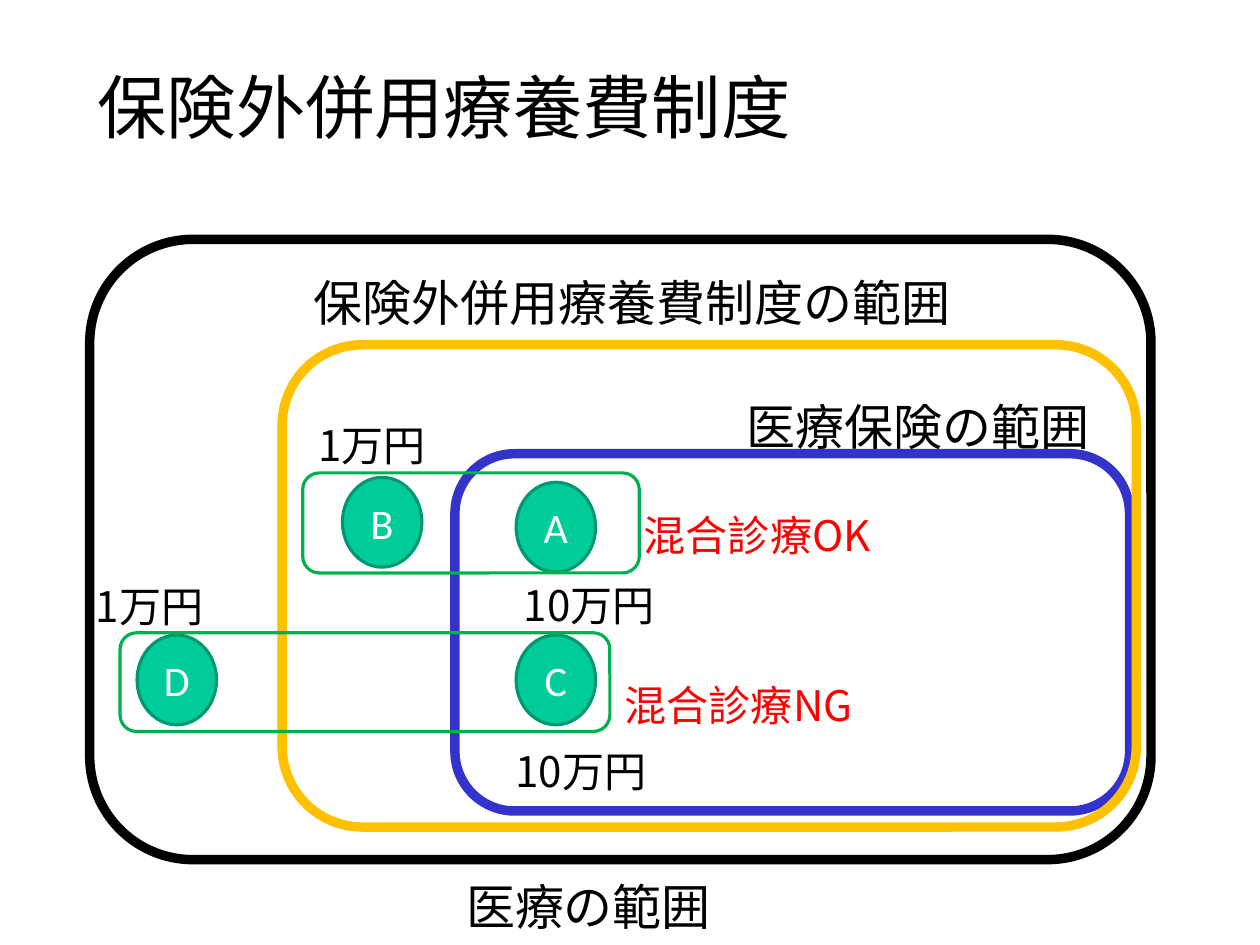
from dataclasses import dataclass
from typing import Any, Optional

from lxml.etree import SubElement
from pptx import Presentation
from pptx.dml.color import RGBColor
from pptx.enum.shapes import MSO_SHAPE
from pptx.enum.text import MSO_ANCHOR, MSO_AUTO_SIZE, PP_ALIGN
from pptx.oxml.ns import qn
from pptx.util import Cm, Pt

BLACK = RGBColor(0x00, 0x00, 0x00)
WHITE = RGBColor(0xFF, 0xFF, 0xFF)
RED = RGBColor(0xFF, 0x00, 0x00)
BLUE = RGBColor(0x33, 0x33, 0xCC)
ORANGE = RGBColor(0xFF, 0xC0, 0x00)
GREEN = RGBColor(0x00, 0xB0, 0x50)
TEAL = RGBColor(0x00, 0xCC, 0x99)
DARK_TEAL = RGBColor(0x00, 0x97, 0x71)

JAPANESE_FONT = "Noto Sans CJK JP"
LATIN_FONT = "Calibri"
TITLE_SIZE, RANGE_SIZE, NOTE_SIZE = 44, 31.1, 26.7
RANGE_HEIGHT, NOTE_HEIGHT = 1.57, 1.4
CARE_WIDTH, CARE_HEIGHT = 1.78, 2.01


@dataclass(frozen=True)
class Frame:
    left: float
    top: float
    width: float
    height: float
    line: RGBColor
    weight: float
    fill: Optional[RGBColor] = None


@dataclass(frozen=True)
class Care:
    letter: str
    left: float
    top: float


@dataclass(frozen=True)
class Label:
    text: str
    left: float
    top: float
    width: float
    size: float = NOTE_SIZE
    color: RGBColor = BLACK


RANGES = (
    Frame(2.01, 5.36, 23.77, 13.89, BLACK, 6),
    Frame(10.19, 10.16, 15.11, 8.0, BLUE, 6, WHITE),
    Frame(6.32, 7.72, 19.13, 10.8, ORANGE, 6),
)
CARES = (
    Care("A", 11.56, 10.8),
    Care("B", 7.67, 10.69),
    Care("C", 11.56, 14.22),
    Care("D", 3.07, 14.22),
)
COMBINATIONS = (
    Frame(6.78, 10.59, 7.54, 2.24, GREEN, 2),
    Frame(2.69, 14.17, 10.97, 2.21, GREEN, 2),
)
LABELS = (
    Label("医療の範囲", 10.19, 19.51, 9.32, RANGE_SIZE),
    Label("保険外併用療養費制度の範囲", 6.78, 5.97, 17.27, RANGE_SIZE),
    Label("医療保険の範囲", 16.48, 8.76, 10.41, RANGE_SIZE),
    Label("混合診療OK", 14.17, 11.28, 9.4, color=RED),
    Label("混合診療NG", 13.74, 15.09, 9.4, color=RED),
    Label("10万円", 11.48, 12.85, 4.67),
    Label("10万円", 11.3, 16.56, 4.67),
    Label("1万円", 6.88, 9.27, 4.67),
    Label("1万円", 1.9, 12.88, 4.67),
)


def set_attributes(target: Any, values: dict[str, Any]) -> None:
    for name, value in values.items():
        setattr(target, name, value)


def write_text(shape: Any, text: str, size: float, color: RGBColor,
               font_name: str = JAPANESE_FONT,
               alignment: PP_ALIGN = PP_ALIGN.LEFT) -> None:
    paragraph = shape.text_frame.paragraphs[0]
    paragraph.alignment = alignment
    run = paragraph.add_run()
    run.text = text
    run.font.color.rgb = color
    set_attributes(run.font, {"name": font_name, "size": Pt(size), "bold": False})
    SubElement(run.font._element, qn("a:ea"), typeface=font_name)


def add_frame(slide: Any, frame: Frame,
              outline: MSO_SHAPE = MSO_SHAPE.ROUNDED_RECTANGLE) -> Any:
    shape = slide.shapes.add_shape(
        outline, Cm(frame.left), Cm(frame.top), Cm(frame.width), Cm(frame.height))
    shape.shadow.inherit = False
    shape.line.color.rgb = frame.line
    shape.line.width = Pt(frame.weight)
    if frame.fill is None:
        shape.fill.background()
    else:
        shape.fill.solid()
        shape.fill.fore_color.rgb = frame.fill
    return shape


def add_care(slide: Any, care: Care) -> None:
    circle = add_frame(
        slide,
        Frame(care.left, care.top, CARE_WIDTH, CARE_HEIGHT, DARK_TEAL, 2, TEAL),
        MSO_SHAPE.OVAL)
    circle.text_frame.vertical_anchor = MSO_ANCHOR.MIDDLE
    write_text(circle, care.letter, NOTE_SIZE, WHITE, LATIN_FONT, PP_ALIGN.CENTER)


def add_label(slide: Any, label: Label) -> None:
    height = RANGE_HEIGHT if label.size == RANGE_SIZE else NOTE_HEIGHT
    box = slide.shapes.add_textbox(
        Cm(label.left), Cm(label.top), Cm(label.width), Cm(height))
    set_attributes(box.text_frame, {
        "word_wrap": True, "auto_size": MSO_AUTO_SIZE.SHAPE_TO_FIT_TEXT})
    write_text(box, label.text, label.size, label.color)


def main() -> None:
    presentation = Presentation()
    set_attributes(presentation, {"slide_width": Cm(28.22), "slide_height": Cm(21.16)})
    slide = presentation.slides.add_slide(presentation.slide_layouts.get_by_name("Title Only"))

    title = slide.shapes.title
    set_attributes(title, {"left": Cm(1.93), "top": Cm(1.12),
                           "width": Cm(24.33), "height": Cm(2.51)})
    set_attributes(title.text_frame, {
        "vertical_anchor": MSO_ANCHOR.MIDDLE, "auto_size": MSO_AUTO_SIZE.NONE})
    write_text(title, "保険外併用療養費制度", TITLE_SIZE, BLACK)

    for medical_range in RANGES:
        add_frame(slide, medical_range)
    for care in CARES:
        add_care(slide, care)
    for combination in COMBINATIONS:
        add_frame(slide, combination)
    for label in LABELS:
        add_label(slide, label)

    presentation.save("out.pptx")


if __name__ == "__main__":
    main()
